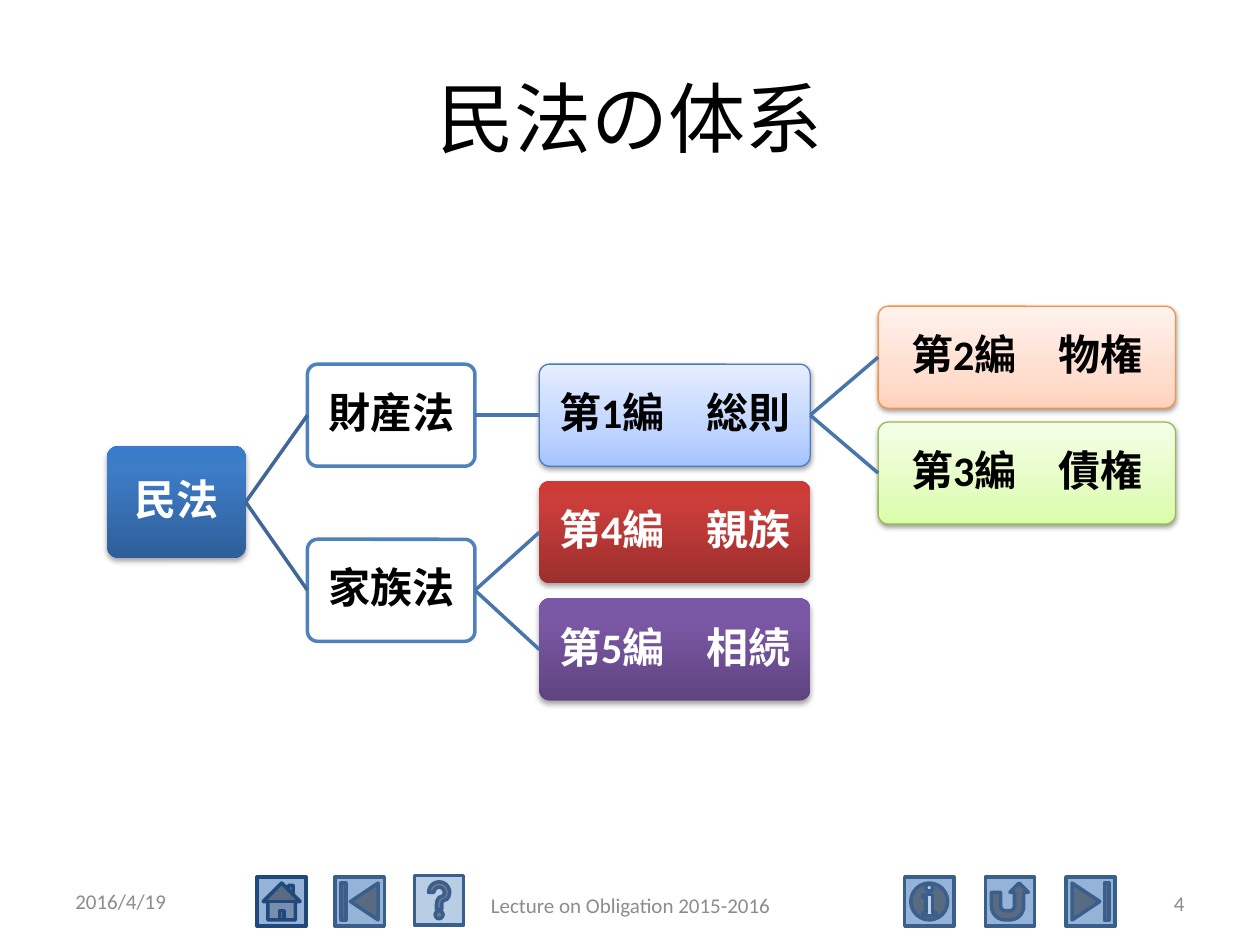
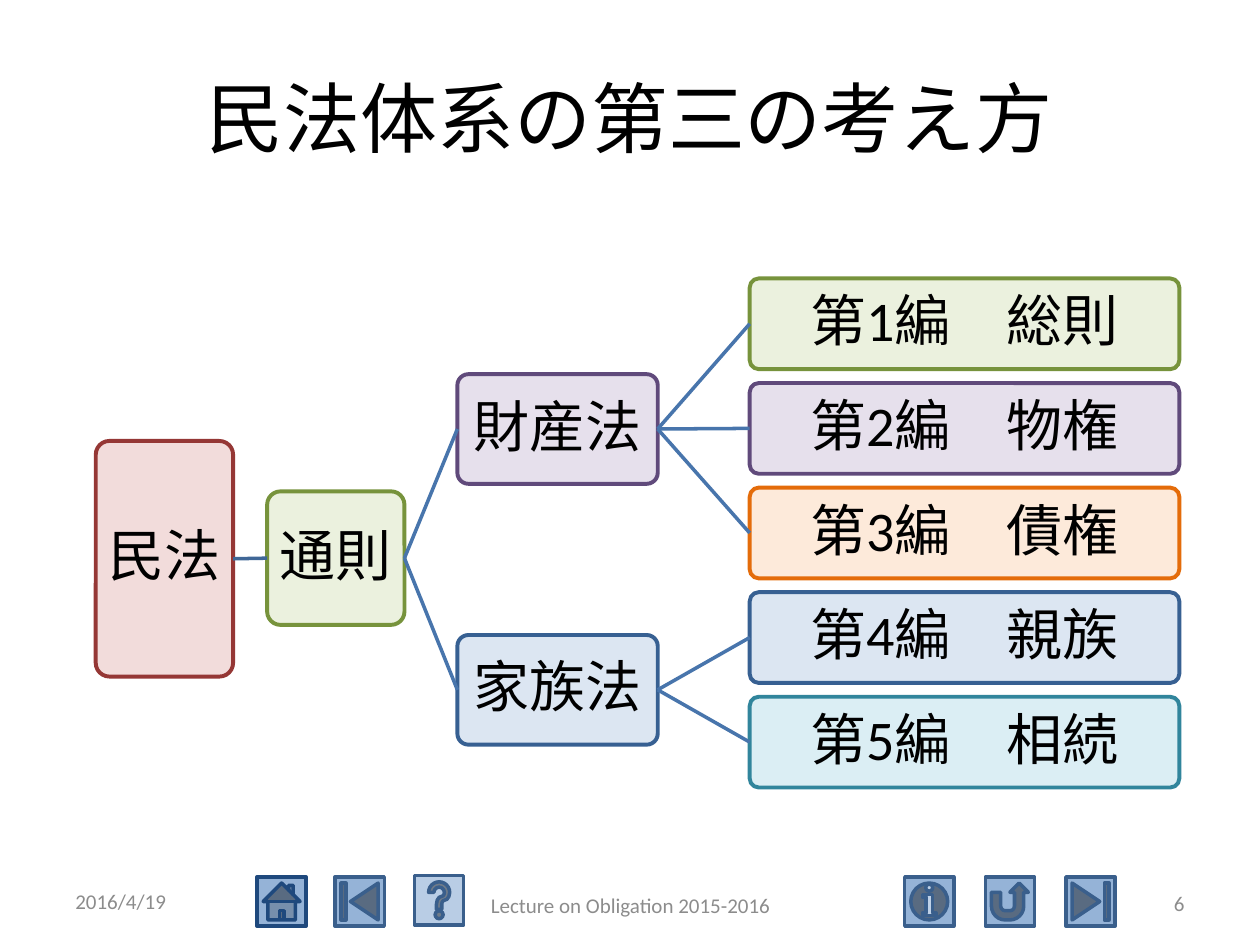
from copy import deepcopy
from dataclasses import dataclass
from typing import Any, NamedTuple

from lxml.etree import SubElement
from pptx import Presentation
from pptx.dml.color import RGBColor
from pptx.enum.shapes import MSO_CONNECTOR, MSO_SHAPE
from pptx.enum.text import MSO_ANCHOR, PP_ALIGN
from pptx.oxml.ns import qn
from pptx.util import Emu, Pt

EMU_PER_PX = 9144
BLANK = 6
FONT = "Calibri"
BLACK, WHITE, GREY = "000000", "FFFFFF", "8C8C8C"
BUTTON_FILL, BUTTON_LINE = "95B3D7", "3A5F8C"
ROOT_LINK, BRANCH_LINK = "3F6797", "4875AC"
LEFT, CENTER, RIGHT = PP_ALIGN.LEFT, PP_ALIGN.CENTER, PP_ALIGN.RIGHT
SIDE_LEFT, SIDE_RIGHT = 1, 3


class Box(NamedTuple):
    left: int
    top: int
    width: int
    height: int


class Level(NamedTuple):
    left: int
    width: int
    height: int


class Button(NamedTuple):
    shape: MSO_SHAPE
    left: int
    top: int = 696
    fill: str = BUTTON_FILL
    line: str = BUTTON_LINE


class Label(NamedTuple):
    box: Box
    size: int
    color: str
    align: PP_ALIGN


class Shadow(NamedTuple):
    alpha: int
    distance: float


@dataclass(frozen=True)
class Style:
    fill: str | tuple[tuple[int, str], ...]
    line: str | None = None
    line_width: float = 2.25
    text: str = BLACK
    shadow: Shadow | None = None


@dataclass(frozen=True)
class Node:
    text: str
    style: Style
    children: tuple["Node", ...] = ()
    row: int = 0

    @property
    def middle(self) -> int:
        if not self.children:
            return self.row
        return sum(c.middle for c in self.children) // len(self.children)


@dataclass(frozen=True)
class Tree:
    title: str
    number: str
    root: Node
    levels: tuple[Level, ...]
    size: int
    bold: bool


BUTTONS = (
    Button(MSO_SHAPE.ACTION_BUTTON_BEGINNING, 266),
    Button(MSO_SHAPE.ACTION_BUTTON_END, 846),
    Button(MSO_SHAPE.ACTION_BUTTON_RETURN, 782),
    Button(MSO_SHAPE.ACTION_BUTTON_HOME, 204, line="1F497D"),
    Button(MSO_SHAPE.ACTION_BUTTON_INFORMATION, 718),
    Button(MSO_SHAPE.ACTION_BUTTON_HELP, 329, top=695, fill="B9CDE5"),
)
BUTTON_SIZE = 39
TITLE = Label(Box(50, 30, 900, 125), 44, BLACK, CENTER)
DATE = Label(Box(50, 695, 233, 40), 12, GREY, LEFT)
LECTURE = Label(Box(342, 698, 317, 40), 12, GREY, CENTER)
NUMBER = Label(Box(717, 697, 233, 40), 12, GREY, RIGHT)


def deep(low: str, middle: str, high: str) -> Style:
    stops = ((0, low), (80, middle), (100, high))
    return Style(stops, text=WHITE, shadow=Shadow(35, 1.8))


def pale(low: str, middle: str, high: str, line: str) -> Style:
    stops = ((0, low), (35, middle), (100, high))
    return Style(stops, line, 0.75, shadow=Shadow(38, 1.6))


OUTLINED = Style(WHITE, "4F81BD", 2)
RED = Style("F2DCDB", "953735")
GREEN = Style("EBF1DE", "77933C")
PURPLE = Style("E6E0EC", "604A7B")
ORANGE = Style("FDEADA", "E46C0A")
BLUE = Style("DCE6F2", "376092")
TEAL = Style("DBEEF4", "31859C")

PROPERTY_BOOKS = (
    Node("第2編　物権", pale("FFD2BD", "FFDED0", "FFF2ED", "F69240"), row=283),
    Node("第3編　債権", pale("DAFDA7", "E4FCC2", "F5FFE7", "98B955"), row=375),
)
GENERAL_BOOK = Node("第1編　総則", pale("A4C4FF", "BFD4FF", "E6EEFF", "4B7EBC"), PROPERTY_BOOKS)
FAMILY_BOOKS = (
    Node("第4編　親族", deep("9C2F2D", "CB3E3A", "CE3B37"), row=422),
    Node("第5編　相続", deep("5F4480", "7B58A6", "7C57A8"), row=515),
)
CIVIL_CODE = Node("民法", deep("2F5F99", "3D7CC7", "3A7CCB"), (
    Node("財産法", OUTLINED, (GENERAL_BOOK,)),
    Node("家族法", OUTLINED, FAMILY_BOOKS),
))

BOOKS = tuple(
    Node(f"第{i + 1}編　{name}", style, row=257 + 83 * i)
    for i, (name, style) in enumerate((
        ("総則", GREEN), ("物権", PURPLE), ("債権", ORANGE), ("親族", BLUE), ("相続", TEAL),
    ))
)
THIRD_VIEW = Node("民法", RED, (
    Node("通則", GREEN, (
        Node("財産法", PURPLE, BOOKS[:3]),
        Node("家族法", BLUE, BOOKS[3:]),
    )),
))

TREES = (
    Tree("民法の体系", "4", CIVIL_CODE,
         (Level(85, 110, 89), Level(244, 133, 81), Level(428, 215, 81), Level(697, 236, 81)),
         24, True),
    Tree("民法体系の第三の考え方", "6", THIRD_VIEW,
         (Level(76, 109, 187), Level(212, 109, 106), Level(363, 159, 87), Level(595, 341, 72)),
         32, False),
)


def px(n: int) -> Emu:
    return Emu(n * EMU_PER_PX)


def rgb(value: str) -> RGBColor:
    return RGBColor.from_string(value)


def apply(obj: Any, values: dict[str, Any]) -> None:
    for name, value in values.items():
        setattr(obj, name, value)


def write(s: Any, text: str, size: int, color: str, align: PP_ALIGN,
          bold: bool = False, frame: dict[str, Any] | None = None,
          paragraph: dict[str, Any] | None = None) -> None:
    tf = s.text_frame
    apply(tf, {"word_wrap": True, "vertical_anchor": MSO_ANCHOR.MIDDLE, **(frame or {})})
    p = tf.paragraphs[0]
    apply(p, {"alignment": align, **(paragraph or {})})
    r = p.add_run()
    r.text = text
    apply(r.font, {"name": FONT, "size": Pt(size), "bold": bold})
    r.font.color.rgb = rgb(color)


def add_label(slide: Any, label: Label, text: str) -> None:
    s = slide.shapes.add_textbox(*map(px, label.box))
    write(s, text, label.size, label.color, label.align)


def paint_gradient(s: Any, stops: tuple[tuple[int, str], ...]) -> None:
    s.fill.gradient()
    s.fill.gradient_angle = 90
    stop_list = s._element.spPr.find(qn("a:gradFill")).find(qn("a:gsLst"))
    stop_list.append(deepcopy(stop_list[0]))
    for stop, (position, color) in zip(s.fill.gradient_stops, stops):
        stop.position = position / 100
        stop.color.rgb = rgb(color)


def add_shadow(s: Any, shadow: Shadow) -> None:
    effects = s._element.spPr.find(qn("a:effectLst"))
    outer = SubElement(effects, qn("a:outerShdw"), blurRad=str(Pt(3.1)),
                       dist=str(Pt(shadow.distance)), dir="5400000", rotWithShape="0")
    color = SubElement(outer, qn("a:srgbClr"), val=BLACK)
    SubElement(color, qn("a:alpha"), val=str(shadow.alpha * 1000))


def add_styled(slide: Any, kind: MSO_SHAPE, box: Box, style: Style) -> Any:
    s = slide.shapes.add_shape(kind, *map(px, box))
    if isinstance(style.fill, str):
        s.fill.solid()
        s.fill.fore_color.rgb = rgb(style.fill)
    else:
        paint_gradient(s, style.fill)
    if style.line:
        s.line.color.rgb = rgb(style.line)
        s.line.width = Pt(style.line_width)
    else:
        s.line.fill.background()
    s.shadow.inherit = False
    if style.shadow:
        add_shadow(s, style.shadow)
    return s


def add_link(slide: Any, parent: Any, child: Any, color: str) -> None:
    c = slide.shapes.add_connector(
        MSO_CONNECTOR.STRAIGHT,
        parent.left + parent.width, parent.top + parent.height // 2,
        child.left, child.top + child.height // 2,
    )
    c.begin_connect(parent, SIDE_RIGHT)
    c.end_connect(child, SIDE_LEFT)
    c.line.color.rgb = rgb(color)
    c.line.width = Pt(2)
    SubElement(c._element.spPr, qn("a:effectLst"))


def add_node(slide: Any, tree: Tree, node: Node, depth: int = 0) -> Any:
    level = tree.levels[depth]
    box = Box(level.left, node.middle - level.height // 2, level.width, level.height)
    s = add_styled(slide, MSO_SHAPE.ROUNDED_RECTANGLE, box, node.style)
    s.adjustments[0] = 0.1
    margins = {f"margin_{side}": px(2) for side in ("left", "top", "right", "bottom")}
    spacing = {"line_spacing": 0.9, "space_after": Pt(tree.size * 0.35)}
    write(s, node.text, tree.size, node.style.text, CENTER, tree.bold, margins, spacing)
    for child in node.children:
        child_shape = add_node(slide, tree, child, depth + 1)
        add_link(slide, s, child_shape, BRANCH_LINK if depth else ROOT_LINK)
    return s


def add_tree_slide(prs: Any, tree: Tree) -> None:
    slide = prs.slides.add_slide(prs.slide_layouts[BLANK])
    for button in BUTTONS:
        box = Box(button.left, button.top, BUTTON_SIZE, BUTTON_SIZE)
        add_styled(slide, button.shape, box, Style(button.fill, button.line, 2))
    add_label(slide, TITLE, tree.title)
    add_label(slide, DATE, "2016/4/19")
    add_label(slide, LECTURE, "Lecture on Obligation 2015-2016")
    add_label(slide, NUMBER, tree.number)
    add_node(slide, tree, tree.root)


def main() -> None:
    prs = Presentation()
    apply(prs, {"slide_width": px(1000), "slide_height": px(750)})
    for tree in TREES:
        add_tree_slide(prs, tree)
    prs.save("out.pptx")


if __name__ == "__main__":
    main()
